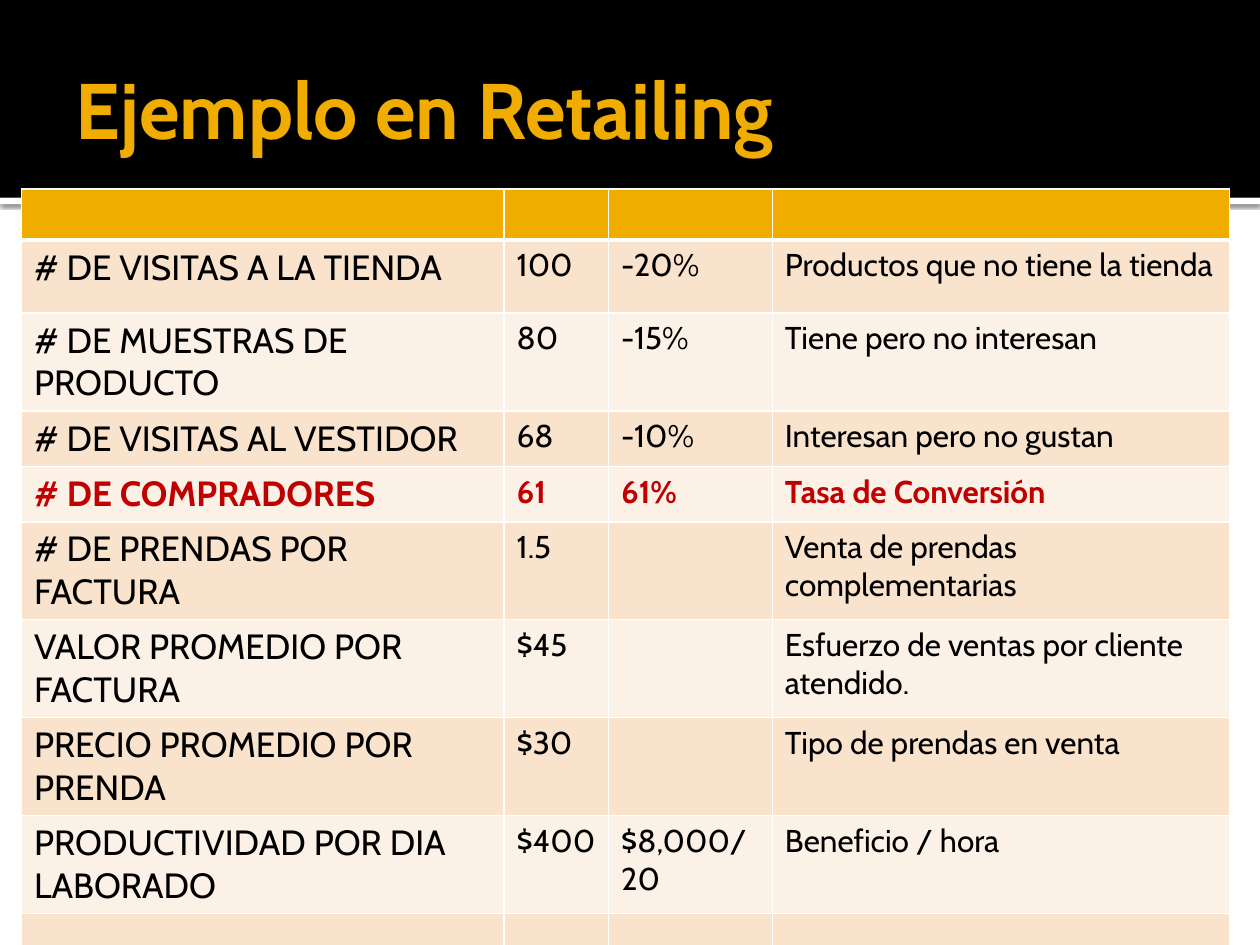
from dataclasses import dataclass

from lxml import etree
from pptx import Presentation
from pptx import util as u
from pptx.dml.color import RGBColor
from pptx.enum import shapes, text
from pptx.oxml.ns import qn


@dataclass(frozen=True)
class Theme:
    font: str = "Cabin"
    black: str = "000000"
    white: str = "FFFFFF"
    gold: str = "F0AD00"
    red: str = "C00000"
    bands: tuple = ("F9E3CC", "FCF1E7")
    title_size: int = 45
    label_size: int = 20
    cell_size: int = 18


class Deck:
    def __init__(self, theme):
        self.theme = theme
        self.prs = Presentation()
        self.prs.slide_width, self.prs.slide_height = u.Inches(10), u.Inches(7.5)
        self.s = self.prs.slides.add_slide(self.prs.slide_layouts[5])

    def style(self, p, size, color, bold=False):
        f = p.font
        f.name, f.size, f.bold = self.theme.font, u.Pt(size), bold
        f.color.rgb = RGBColor.from_string(color)

    def band(self, top, height, color):
        sp = self.s.shapes.add_shape(shapes.MSO_SHAPE.RECTANGLE, 0, u.Inches(top),
                                     self.prs.slide_width, u.Inches(height))
        sp.shadow.inherit = False
        sp.fill.solid()
        sp.fill.fore_color.rgb = RGBColor.from_string(color)
        sp.line.fill.background()
        return sp

    def drop_shadow(self, sp, blur, dist, alpha):
        effects = sp._element.spPr.find(qn("a:effectLst"))
        shadow = etree.SubElement(effects, qn("a:outerShdw"), blurRad=str(u.Pt(blur)),
                                  dist=str(u.Pt(dist)), dir="5400000", rotWithShape="0")
        clr = etree.SubElement(shadow, qn("a:srgbClr"), val=self.theme.black)
        etree.SubElement(clr, qn("a:alpha"), val=str(alpha * 1000))

    def title(self, words, left, top, width, height):
        sp = self.s.shapes.title
        sp.left, sp.top, sp.width, sp.height = map(u.Inches, (left, top, width, height))
        tf = sp.text_frame
        tf.text = words
        tf.vertical_anchor = text.MSO_ANCHOR.MIDDLE
        tf.margin_left = u.Inches(0.1)
        tf.margin_right = tf.margin_top = tf.margin_bottom = u.Inches(0.05)
        tf.paragraphs[0].alignment = text.PP_ALIGN.LEFT
        self.style(tf.paragraphs[0], self.theme.title_size, self.theme.gold, True)
        # Bring the title in front of the bands
        self.s.shapes._spTree.append(sp._element)

    def borders(self, cell, bottom):
        tc_pr = cell._tc.get_or_add_tcPr()
        for i, (side, width) in enumerate((("L", 1), ("R", 1), ("T", 1), ("B", bottom))):
            ln = etree.Element(qn(f"a:ln{side}"), w=str(u.Pt(width)))
            fill = etree.SubElement(ln, qn("a:solidFill"))
            etree.SubElement(fill, qn("a:srgbClr"), val=self.theme.white)
            tc_pr.insert(i, ln)

    def table(self, rows, left, top, widths, heights, highlight):
        t = self.theme
        tbl = self.s.shapes.add_table(
            len(rows), len(widths), u.Inches(left), u.Inches(top),
            u.Inches(sum(widths)), u.Inches(sum(heights))).table
        for col, width in zip(tbl.columns, widths):
            col.width = u.Inches(width)
        for i, (row, height) in enumerate(zip(rows, heights)):
            tbl.rows[i].height = u.Inches(height)
            fill = t.bands[(i - 1) % 2] if i else t.gold
            color = t.red if i == highlight else t.black
            for j, words in enumerate(row):
                cell = tbl.cell(i, j)
                cell.text = words
                cell.fill.solid()
                cell.fill.fore_color.rgb = RGBColor.from_string(fill)
                size = t.label_size if words and j == 0 else t.cell_size
                self.style(cell.text_frame.paragraphs[0], size, color, i == highlight)
                self.borders(cell, 1 if i else 3)


EMPTY = ("", "", "", "")
ROWS = [
    EMPTY,
    ("# DE VISITAS A LA TIENDA", "100", "-20%", "Productos que no tiene la tienda"),
    ("# DE MUESTRAS DE PRODUCTO", "80", "-15%", "Tiene pero no interesan"),
    ("# DE VISITAS AL VESTIDOR", "68", "-10%", "Interesan pero no gustan"),
    ("# DE COMPRADORES", "61", "61%", "Tasa de Conversión"),
    ("# DE PRENDAS POR FACTURA", "1.5", "", "Venta de prendas complementarias"),
    ("VALOR PROMEDIO POR FACTURA", "$45", "", "Esfuerzo de ventas por cliente atendido."),
    ("PRECIO PROMEDIO POR PRENDA", "$30", "", "Tipo de prendas en venta"),
    ("PRODUCTIVIDAD POR DIA LABORADO", "$400", "$8,000/20", "Beneficio / hora"),
    EMPTY,
]


def main():
    theme = Theme()
    deck = Deck(theme)

    # Header bands
    strip = deck.band(1.57, 0.05, theme.white)
    deck.drop_shadow(strip, blur=2.5, dist=0.8, alpha=60)
    deck.band(0, 1.57, theme.black)

    # Title
    deck.title("Ejemplo en Retailing", 0.5, 0.17, 9, 1.37)

    # Retail funnel table
    deck.table(ROWS, 0.17, 1.5, widths=(3.83, 0.83, 1.3, 3.63),
               heights=(0.38, 0.58, 0.58, 0.41, 0.41, 0.66, 0.73, 0.73, 0.73, 0.38),
               highlight=4)

    deck.prs.save("out.pptx")


if __name__ == "__main__":
    main()
